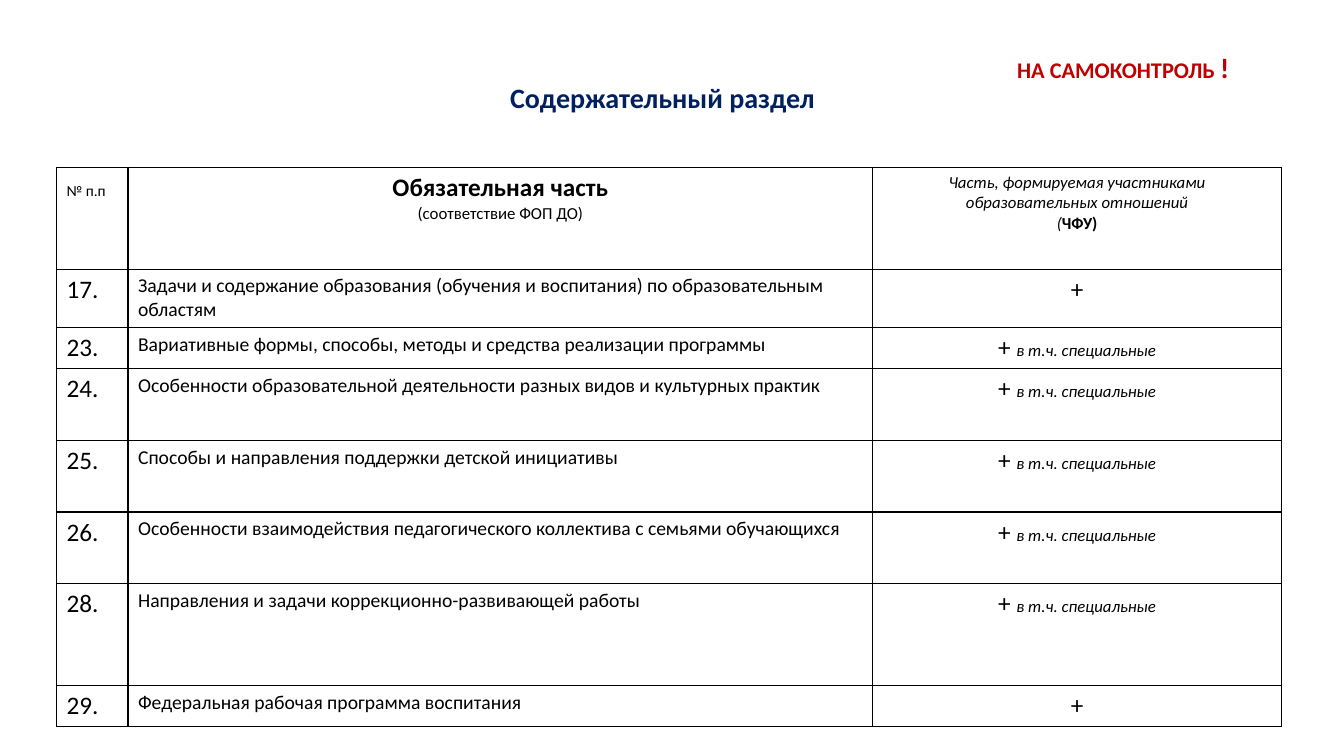
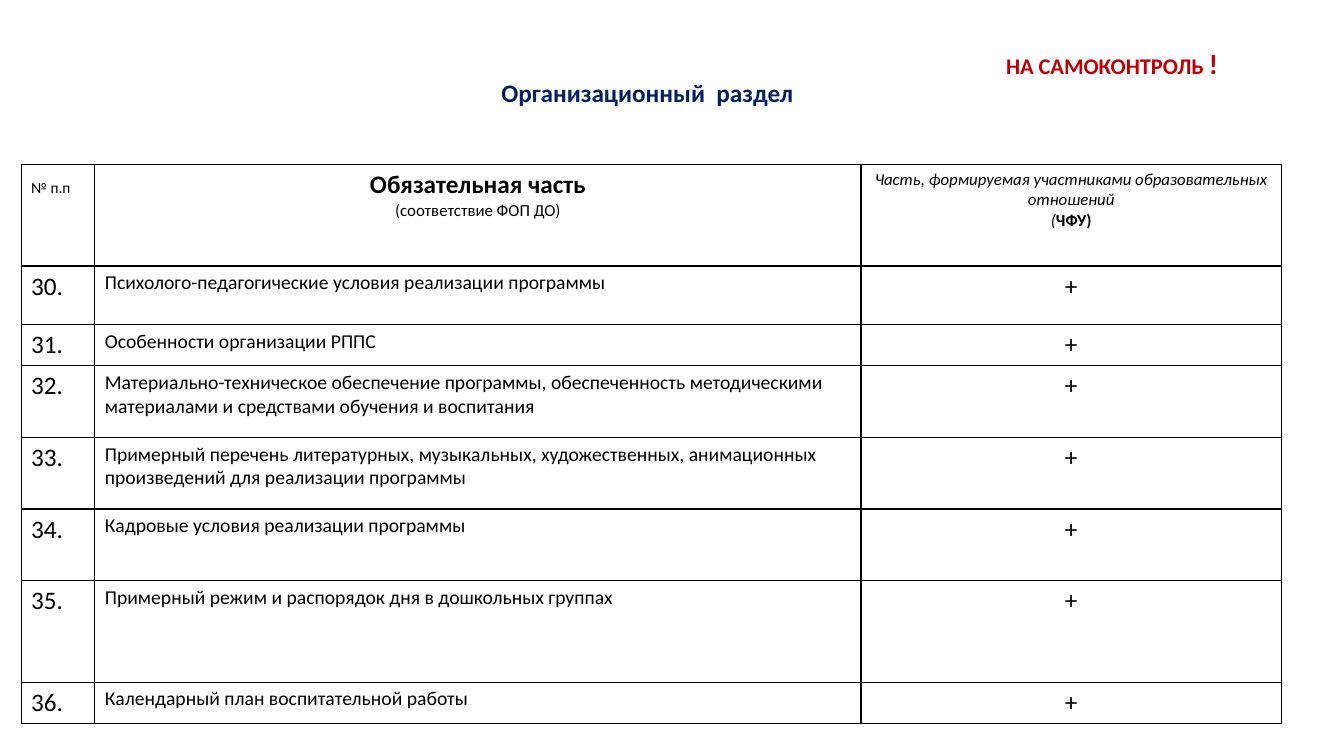
import pptx
import pptx.dml.color
import pptx.enum.text
import pptx.oxml.ns
import pptx.util
import lxml.etree

Inches = pptx.util.Inches
Pt = pptx.util.Pt
ALIGN = pptx.enum.text.PP_ALIGN
qn = pptx.oxml.ns.qn

FONT = "Calibri"
COLORS = {"black": "000000", "white": "FFFFFF", "red": "C00000", "navy": "002060"}
NOTE = "НА САМОКОНТРОЛЬ "
SPECIAL = "в т.ч. специальные"
TABLE_RIGHT = 12.71
COL_SHARES = (0.0584, 0.608, 0.3336)
ROW_HEIGHTS = (1.01, 0.58, 0.41, 0.71, 0.71, 0.71, 1.01, 0.41)

HEADER = (
    [[("№ п.п", {"size": 11})]],
    [
        [("Обязательная часть", {"size": 18, "bold": True})],
        [("(соответствие ФОП ДО)", {"size": 12})],
    ],
    [
        [("Часть, формируемая участниками образовательных отношений", {"size": 12, "italic": True})],
        [("(", {"size": 12, "italic": True}), ("ЧФУ)", {"size": 12, "bold": True})],
    ],
)

SLIDES = [
    {
        "title": "Содержательный раздел",
        "title_size": 20,
        "title_box": (0.56, 0.57, 12.02, 0.8),
        "note_box": (9.99, 0.47, 2.5, 0.4),
        "table_top": 1.66,
        "table_width": 12.15,
        "rows": [
            ("17.", "Задачи и содержание образования (обучения и воспитания) по образовательным областям", ""),
            ("23.", "Вариативные формы, способы, методы и средства реализации программы", SPECIAL),
            ("24.", "Особенности образовательной деятельности разных видов и культурных практик", SPECIAL),
            ("25.", "Способы и направления поддержки детской инициативы", SPECIAL),
            ("26.", "Особенности взаимодействия педагогического коллектива с семьями обучающихся", SPECIAL),
            ("28.", "Направления и задачи коррекционно-развивающей работы", SPECIAL),
            ("29.", "Федеральная рабочая программа воспитания", ""),
        ],
    },
    {
        "title": "Организационный  раздел",
        "title_size": 18,
        "title_box": (0.13, 0.52, 12.58, 0.8),
        "note_box": (9.88, 0.43, 2.5, 0.4),
        "table_top": 1.63,
        "table_width": 12.5,
        "rows": [
            ("30.", "Психолого-педагогические условия реализации программы", ""),
            ("31.", "Особенности организации РППС", ""),
            ("32.", "Материально-техническое обеспечение программы, обеспеченность методическими материалами и средствами обучения и воспитания", ""),
            ("33.", "Примерный перечень литературных, музыкальных, художественных, анимационных произведений для реализации программы", ""),
            ("34.", "Кадровые условия реализации программы", ""),
            ("35.", "Примерный режим и распорядок дня в дошкольных группах", ""),
            ("36.", "Календарный план воспитательной работы", ""),
        ],
    },
]


def rgb(name):
    return pptx.dml.color.RGBColor.from_string(COLORS[name])


def add_text(p, text, size=14, color="black", bold=False, italic=False):
    r = p.add_run()
    r.text = text
    r.font.name = FONT
    r.font.size = Pt(size)
    r.font.bold = bold
    r.font.italic = italic
    r.font.color.rgb = rgb(color)


def first_line(sp, align):
    tf = sp.text_frame
    tf.word_wrap = True
    tf.auto_size = pptx.enum.text.MSO_AUTO_SIZE.NONE
    tf.vertical_anchor = pptx.enum.text.MSO_ANCHOR.MIDDLE
    p = tf.paragraphs[0]
    p.alignment = align
    return p


def add_title(slide, data):
    sp = slide.shapes.title
    sp.left, sp.top, sp.width, sp.height = map(Inches, data["title_box"])
    p = first_line(sp, ALIGN.CENTER)
    add_text(p, data["title"], size=data["title_size"], color="navy", bold=True)


def add_note(slide, data):
    sp = slide.shapes.add_textbox(*map(Inches, data["note_box"]))
    p = first_line(sp, ALIGN.LEFT)
    add_text(p, NOTE, size=16, color="red", bold=True)
    add_text(p, "!", size=20, color="red", bold=True)


def format_cell(cell):
    tcPr = cell._tc.get_or_add_tcPr()
    for side in ("lnL", "lnR", "lnT", "lnB"):
        ln = lxml.etree.SubElement(tcPr, qn("a:" + side), w=str(Pt(1)))
        fill = lxml.etree.SubElement(ln, qn("a:solidFill"))
        lxml.etree.SubElement(fill, qn("a:srgbClr"), val=COLORS["black"])
    cell.fill.solid()
    cell.fill.fore_color.rgb = rgb("white")


def fill_cell(cell, paragraphs, align):
    format_cell(cell)
    tf = cell.text_frame
    for i, runs in enumerate(paragraphs):
        p = tf.add_paragraph() if i else tf.paragraphs[0]
        p.alignment = align
        for text, style in runs:
            add_text(p, text, **style)


def body_row(number, topic, remark):
    mark = [("+ " if remark else "+", {"size": 18})]
    if remark:
        mark.append((remark, {"size": 12, "italic": True}))
    return [[(number, {"size": 18})]], [[(topic, {"size": 14})]], [mark]


def add_section_table(slide, data):
    width = data["table_width"]
    rows = [HEADER] + [body_row(*row) for row in data["rows"]]
    frame = slide.shapes.add_table(
        len(rows), len(COL_SHARES), Inches(TABLE_RIGHT - width), Inches(data["table_top"]),
        Inches(width), Inches(sum(ROW_HEIGHTS)))
    table = frame.table
    table.first_row = False
    table.horz_banding = False
    for column, share in zip(table.columns, COL_SHARES):
        column.width = Inches(width * share)
    for i, (row, height) in enumerate(zip(rows, ROW_HEIGHTS)):
        table.rows[i].height = Inches(height)
        for j, paragraphs in enumerate(row):
            centred = j == 2 or (i == 0 and j == 1)
            fill_cell(table.cell(i, j), paragraphs, ALIGN.CENTER if centred else ALIGN.LEFT)
    table.cell(0, 0).margin_top = Inches(0.14)


def main():
    prs = pptx.Presentation()
    prs.slide_width = Inches(13.33)
    prs.slide_height = Inches(7.5)
    for data in SLIDES:
        slide = prs.slides.add_slide(prs.slide_layouts[5])
        add_title(slide, data)
        add_note(slide, data)
        add_section_table(slide, data)
    prs.save("out.pptx")


if __name__ == "__main__":
    main()
